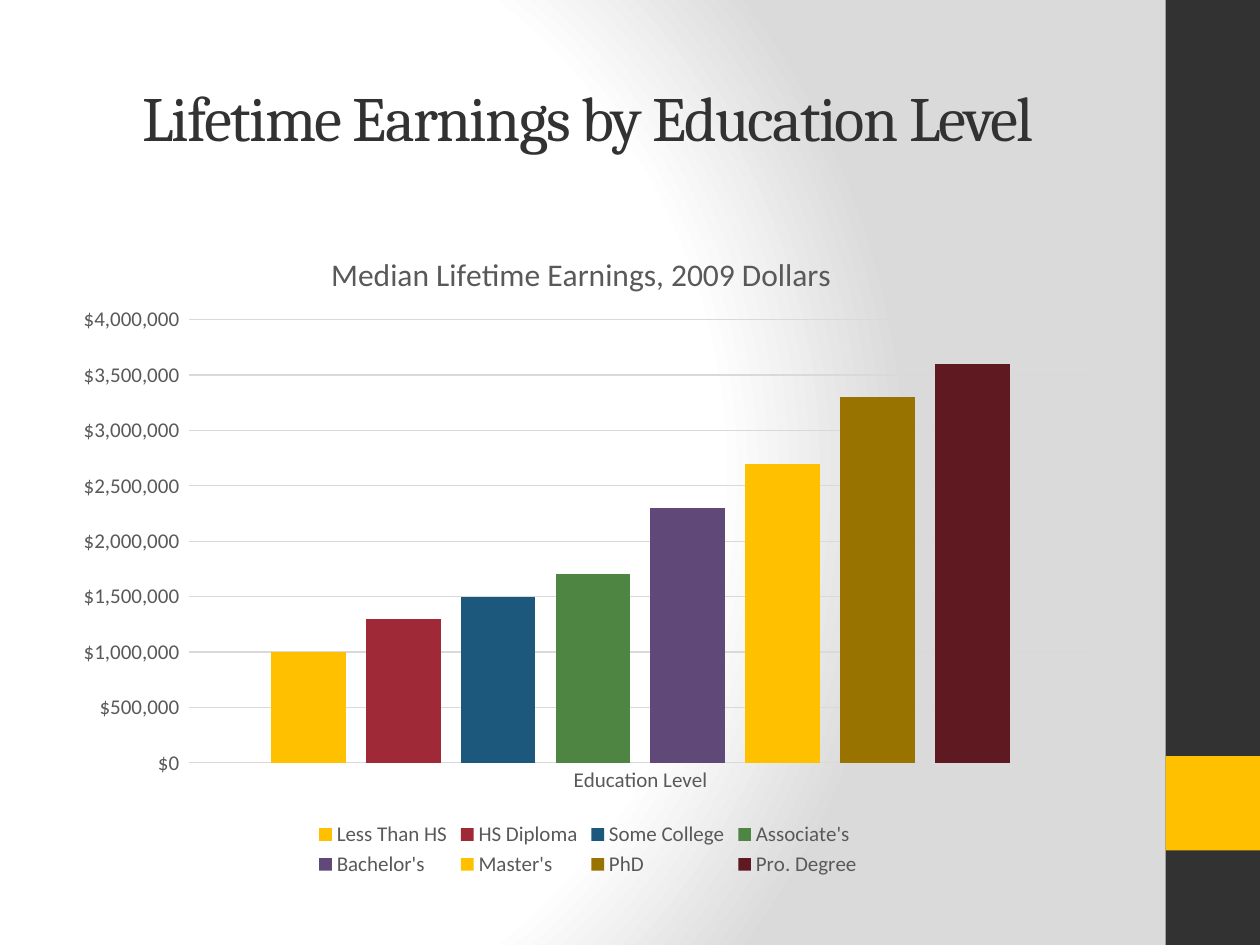
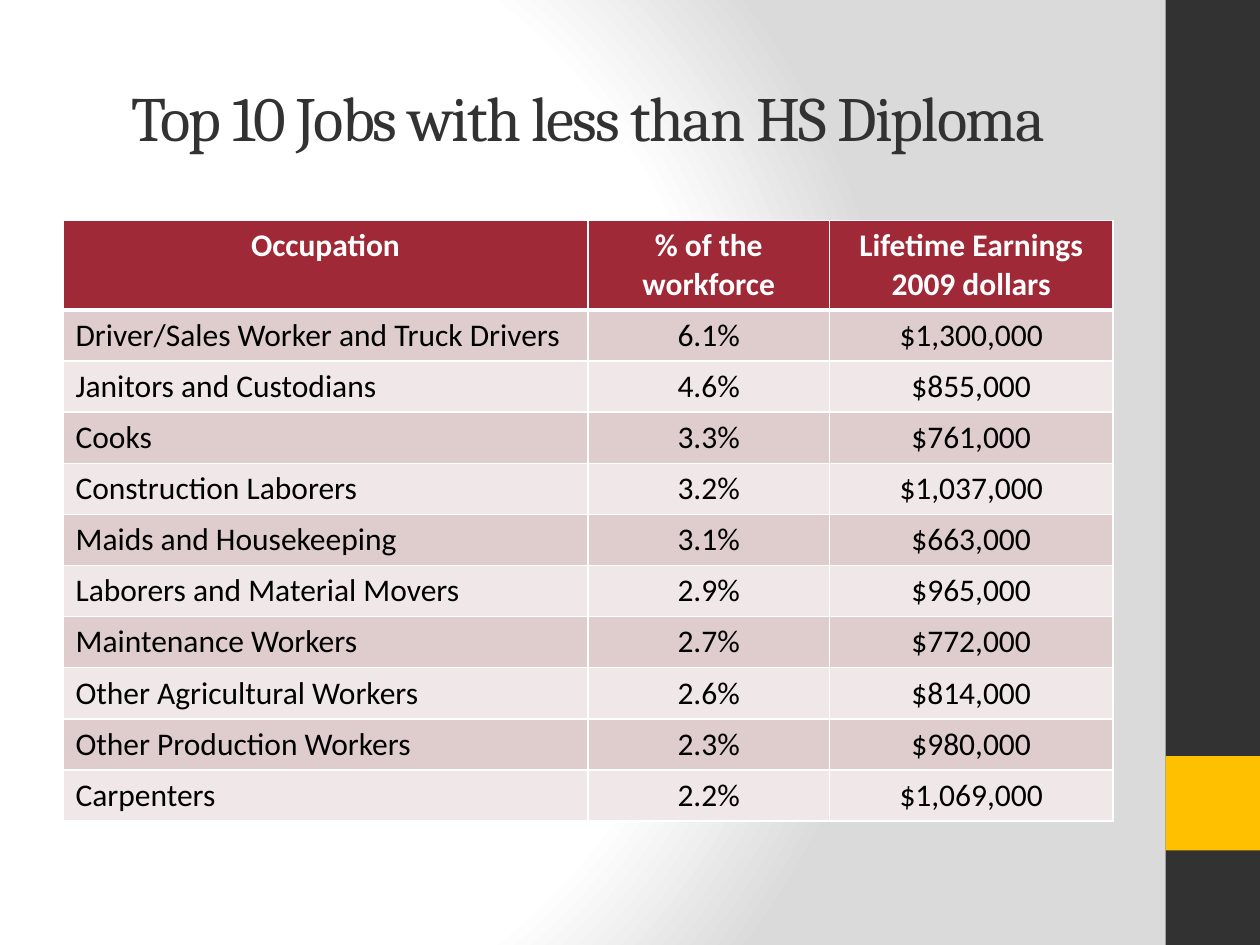
"""Build two slides on education, jobs and lifetime earnings."""
from lxml.etree import SubElement
from pptx import Presentation
from pptx.chart.data import CategoryChartData
from pptx.dml.color import RGBColor
from pptx.enum.chart import XL_CHART_TYPE, XL_LEGEND_POSITION, XL_TICK_MARK
from pptx.enum.shapes import MSO_SHAPE
from pptx.enum.text import MSO_ANCHOR, MSO_AUTO_SIZE, PP_ALIGN
from pptx.oxml import parse_xml
from pptx.oxml.ns import nsdecls, qn
from pptx.util import Inches, Pt

DARK, GOLD, RED, WHITE, BLACK = "323232", "FFC000", "9F2936", "FFFFFF", "000000"
GRAY, RULE = "595959", "D9D9D9"
STRIPES = ("F0E8E8", "DFCDCE")
MONEY = '"$"#,##0_);[Red]\\("$"#,##0\\)'
COLUMNS, ROWS = 120, 90
TITLE_AREA = (6, 3.6, 100, 15)
CONTENT_AREA = (6, 21, 100, 63)

TITLE_FONT = {"name": "Cambria", "size": Pt(36), "color": DARK}
CHART_TITLE_FONT = {"name": "Calibri", "size": Pt(18), "bold": False, "color": GRAY}
LABEL_FONT = {"name": "Calibri", "size": Pt(12), "color": GRAY}
HEADER_FONT = {"name": "Calibri", "size": Pt(18), "bold": True, "color": WHITE}
CELL_FONT = {"name": "Calibri", "size": Pt(18), "bold": False, "color": BLACK}

EARNINGS = (
    ("Less Than HS", 1000000, GOLD),
    ("HS Diploma", 1300000, RED),
    ("Some College", 1500000, "1B587C"),
    ("Associate's", 1700000, "4E8542"),
    ("Bachelor's", 2300000, "604878"),
    ("Master's", 2700000, GOLD),
    ("PhD", 3300000, "997300"),
    ("Pro. Degree", 3600000, "5F1920"),
)
JOBS = (
    ("Occupation", "% of the workforce", "Lifetime Earnings 2009 dollars"),
    ("Driver/Sales Worker and Truck Drivers", "6.1%", "$1,300,000"),
    ("Janitors and Custodians", "4.6%", "$855,000"),
    ("Cooks", "3.3%", "$761,000"),
    ("Construction Laborers", "3.2%", "$1,037,000"),
    ("Maids and Housekeeping", "3.1%", "$663,000"),
    ("Laborers and Material Movers", "2.9%", "$965,000"),
    ("Maintenance Workers", "2.7%", "$772,000"),
    ("Other Agricultural Workers", "2.6%", "$814,000"),
    ("Other Production Workers", "2.3%", "$980,000"),
    ("Carpenters", "2.2%", "$1,069,000"),
)


def rgb(value):
    """Turn a hex string into a colour."""
    return RGBColor.from_string(value)


def set_font(font, style):
    """Apply a dict of format values to a font."""
    for name, value in style.items():
        if name == "color":
            font.color.rgb = rgb(value)
        else:
            setattr(font, name, value)


def set_line(line, color, width):
    """Colour a line and set its width in points."""
    line.color.rgb = rgb(color)
    line.width = Pt(width)


def set_layout(element, index, **shares):
    """Place a chart part by shares of the chart's size."""
    for old in element.findall(qn("c:layout")):
        element.remove(old)
    layout = parse_xml(f"<c:layout {nsdecls('c')}><c:manualLayout/></c:layout>")
    manual = layout[0]
    if "w" in shares:
        SubElement(manual, qn("c:layoutTarget")).set("val", "inner")
    for mode in ("xMode", "yMode"):
        SubElement(manual, qn(f"c:{mode}")).set("val", "edge")
    for name, share in shares.items():
        SubElement(manual, qn(f"c:{name}")).set("val", str(share))
    element.insert(index, layout)


class Deck:
    """Hold the shared style and the current slide."""

    def __init__(self):
        """Open a presentation with the shared background."""
        self.prs = Presentation()
        self.prs.slide_width, self.prs.slide_height = Inches(10), Inches(7.5)
        master = self.prs.slide_master
        master.background.fill.gradient()
        old = master.element.find(".//" + qn("a:gradFill"))
        stops = "".join(
            f'<a:gs pos="{pos}000"><a:srgbClr val="{color}"/></a:gs>'
            for pos, color in ((0, WHITE), (75, WHITE), (100, "DADADA")))
        old.getparent().replace(old, parse_xml(
            f'<a:gradFill {nsdecls("a")} rotWithShape="1"><a:gsLst>{stops}</a:gsLst>'
            '<a:path path="circle"><a:fillToRect l="20000" t="50000" '
            'r="100000" b="50000"/></a:path></a:gradFill>'))

    def x(self, columns):
        """Convert grid columns to a length."""
        return int(self.prs.slide_width * columns / COLUMNS)

    def y(self, rows):
        """Convert grid rows to a length."""
        return int(self.prs.slide_height * rows / ROWS)

    def box(self, area):
        """Convert a grid area to left, top, width and height."""
        left, top, width, height = area
        return self.x(left), self.y(top), self.x(width), self.y(height)

    def slide(self, title):
        """Start a slide with its bands and title."""
        self.s = self.prs.slides.add_slide(self.prs.slide_layouts[5])
        self.band((111, 0, 9, 90), DARK)
        self.band((111, 72, 9, 9), GOLD)
        self.title(title)

    def band(self, area, color):
        """Draw a plain filled rectangle."""
        sp = self.s.shapes.add_shape(MSO_SHAPE.RECTANGLE, *self.box(area))
        sp.shadow.inherit = False
        sp.fill.solid()
        sp.fill.fore_color.rgb = rgb(color)
        sp.line.fill.background()

    def title(self, text):
        """Fill and place the title placeholder."""
        sp = self.s.shapes.title
        sp.left, sp.top, sp.width, sp.height = self.box(TITLE_AREA)
        tf = sp.text_frame
        tf.word_wrap, tf.auto_size = True, MSO_AUTO_SIZE.NONE
        tf.vertical_anchor = MSO_ANCHOR.MIDDLE
        p = tf.paragraphs[0]
        p.alignment = PP_ALIGN.CENTER
        r = p.add_run()
        r.text = text
        set_font(r.font, TITLE_FONT)
        r.font.fill
        r._r.get_or_add_rPr().set("spc", "-100")

    def column_chart(self, title, category, rows):
        """Add a clustered column chart with one series per row."""
        data = CategoryChartData(number_format=MONEY)
        data.categories = [category]
        for name, value, _ in rows:
            data.add_series(name, [value])
        chart = self.s.shapes.add_chart(
            XL_CHART_TYPE.COLUMN_CLUSTERED, *self.box(CONTENT_AREA), data).chart
        set_font(chart.font, {"name": "Calibri", "size": Pt(10), "color": BLACK})
        tf = chart.chart_title.text_frame
        tf.text = title
        set_font(tf.paragraphs[0].runs[0].font, CHART_TITLE_FONT)
        chart.chart_title.include_in_layout = False
        set_layout(chart.chart_title._element, 1, x=0.25, y=0.04)
        set_layout(chart.element.find(".//" + qn("c:plotArea")), 0,
                   x=0.12, y=0.15, w=0.86, h=0.67)

        chart.has_legend = True
        chart.legend.position = XL_LEGEND_POSITION.BOTTOM
        chart.legend.include_in_layout = False
        set_font(chart.legend.font, LABEL_FONT)
        for axis in (chart.category_axis, chart.value_axis):
            axis.major_tick_mark = axis.minor_tick_mark = XL_TICK_MARK.NONE
            set_font(axis.tick_labels.font, LABEL_FONT)
        set_line(chart.category_axis.format.line, RULE, 0.75)
        values = chart.value_axis
        values.minimum_scale, values.maximum_scale, values.major_unit = 0, 4000000, 500000
        values.format.line.fill.background()
        set_line(values.major_gridlines.format.line, RULE, 0.75)
        values.tick_labels.number_format = MONEY
        values.tick_labels.number_format_is_linked = False

        plot = chart.plots[0]
        plot.gap_width, plot.overlap, plot.vary_by_categories = 219, -27, False
        for series, (_, _, color) in zip(plot.series, rows):
            series.format.fill.solid()
            series.format.fill.fore_color.rgb = rgb(color)

    def table(self, rows, shares, header_height, row_height):
        """Add a striped table with column widths given as shares."""
        left, top, width, _ = CONTENT_AREA
        height = header_height + row_height * (len(rows) - 1)
        table = self.s.shapes.add_table(
            len(rows), len(shares), *self.box((left, top, width, height))).table
        for column, share in zip(table.columns, shares):
            column.width = self.x(width * share)
        for i, texts in enumerate(rows):
            table.rows[i].height = self.y(row_height if i else header_height)
            for j, text in enumerate(texts):
                self.cell(table.cell(i, j), text, i, j)

    def cell(self, cell, text, row, column):
        """Write and format one table cell."""
        tcPr = cell._tc.get_or_add_tcPr()
        for side in "LRTB":
            thick = (side == "B" and row == 0) or (side == "T" and row == 1)
            tcPr.append(parse_xml(
                f'<a:ln{side} {nsdecls("a")} w="{Pt(3 if thick else 1)}"><a:solidFill>'
                f'<a:srgbClr val="{WHITE}"/></a:solidFill></a:ln{side}>'))
        cell.fill.solid()
        cell.fill.fore_color.rgb = rgb(STRIPES[row % 2] if row else RED)
        p = cell.text_frame.paragraphs[0]
        p.alignment = PP_ALIGN.LEFT if row and column == 0 else PP_ALIGN.CENTER
        r = p.add_run()
        r.text = text
        set_font(r.font, CELL_FONT if row else HEADER_FONT)


def main():
    """Build and save the slides."""
    deck = Deck()
    deck.slide("Lifetime Earnings by Education Level")
    deck.column_chart("Median Lifetime Earnings, 2009 Dollars", "Education Level", EARNINGS)
    deck.slide("Top 10 Jobs with less than HS Diploma")
    deck.table(JOBS, (0.5, 0.23, 0.27), 8.4, 4.87)
    deck.prs.save("out.pptx")


if __name__ == "__main__":
    main()
